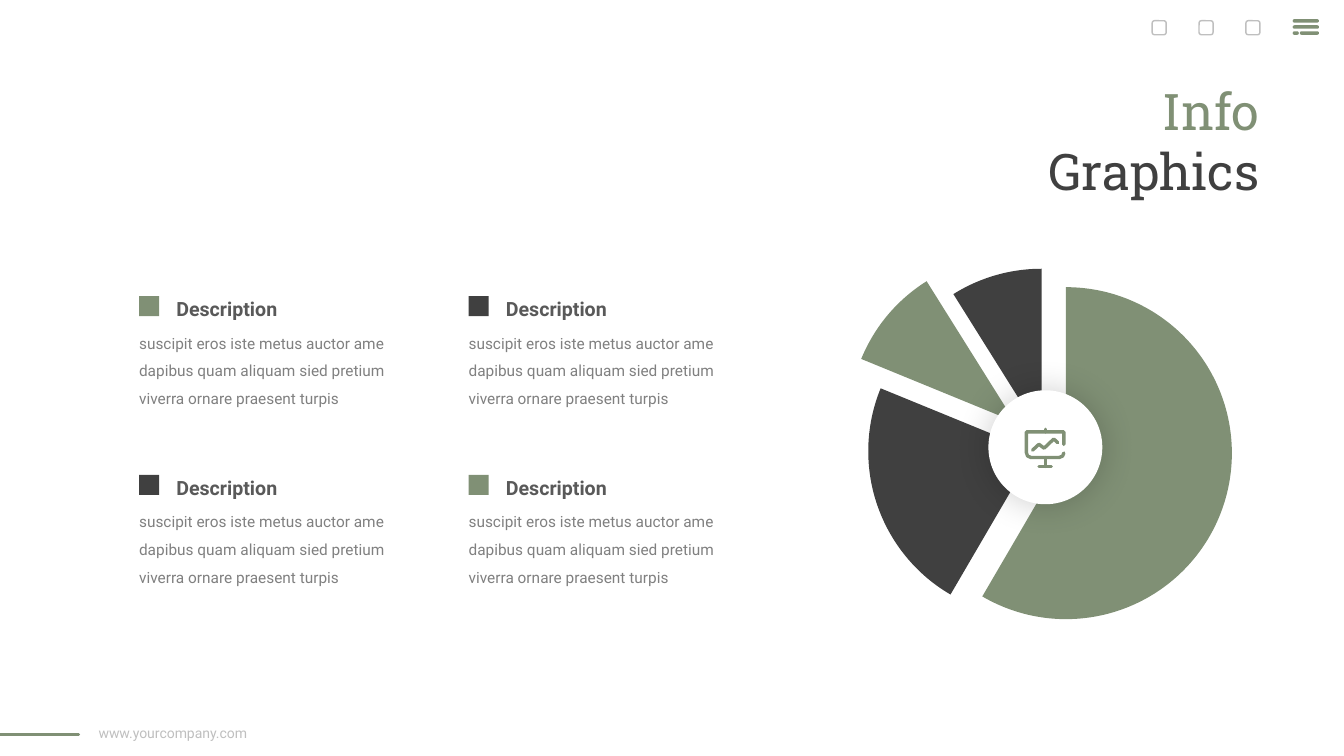
from dataclasses import dataclass

from lxml import etree
from pptx import Presentation
from pptx.chart.data import CategoryChartData
from pptx.dml.color import RGBColor
from pptx.enum.chart import XL_CHART_TYPE
from pptx.enum.shapes import MSO_CONNECTOR, MSO_SHAPE
from pptx.enum.text import MSO_ANCHOR, MSO_AUTO_SIZE, PP_ALIGN
from pptx.oxml import parse_xml
from pptx.oxml.ns import nsdecls, qn
from pptx.util import Pt

RECTANGLE, ROUNDED, OVAL = MSO_SHAPE.RECTANGLE, MSO_SHAPE.ROUNDED_RECTANGLE, MSO_SHAPE.OVAL
STRAIGHT, PIE = MSO_CONNECTOR.STRAIGHT, XL_CHART_TYPE.PIE
LEFT, CENTER, RIGHT = PP_ALIGN.LEFT, PP_ALIGN.CENTER, PP_ALIGN.RIGHT
TOP, GROW = MSO_ANCHOR.TOP, MSO_AUTO_SIZE.SHAPE_TO_FIT_TEXT
GREEN, DARK, WHITE, PALE = "809075", "404040", "FFFFFF", "BFBFBF"
HEADING, BODY = "595959", "808080"
DESCRIPTION = ("suscipit eros iste metus auctor ame dapibus quam aliquam sied pretium "
               "viverra ornare praesent turpis")


@dataclass(frozen=True)
class Card:
    """A description block: its corner and marker colour."""
    left: float
    top: float
    color: str


@dataclass(frozen=True)
class Slice:
    """A pie slice: value, colour and distance from the centre in percent."""
    value: int
    color: str
    explosion: int


@dataclass(frozen=True)
class Bar:
    """One rounded bar of the menu icon."""
    left: float
    top: float
    width: float


CARDS = [Card(99.4, 211.5, GREEN), Card(99.4, 339.2, DARK),
         Card(334.9, 211.5, DARK), Card(334.9, 339.2, GREEN)]
SLICES = [Slice(59, GREEN, 13), Slice(23, DARK, 7), Slice(10, GREEN, 24), Slice(9, DARK, 8)]
MENU_BARS = [Bar(923.8, 13.7, 18.8), Bar(923.8, 18.05, 18.8),
             Bar(923.8, 22.4, 4.4), Bar(928.9, 22.4, 13.7)]
BOARD = [(760.3, 317.5), (760.3, 308.5), (733.5, 308.5), (733.5, 323.3), (734.4, 325.8),
         (736.8, 326.8), (757, 326.8), (759.4, 325.8), (760.3, 323.6)]
TREND = [(737.9, 321.6), (742.5, 317.4), (746.2, 320.2), (753.1, 313.6), (755.9, 316.2)]
STAND = [((747, 306.6), (747, 308.5)), ((747, 326.8), (747, 333.2)),
         ((742.5, 333.2), (751.3, 333.2))]


def rgb(color: str) -> RGBColor:
    """Turn a hex string into a colour."""
    return RGBColor.from_string(color)


def write(paragraph, text: str, *, size: float, color: str, font: str = "Roboto",
          bold: bool = False, align=LEFT, spacing: float = 1.0) -> None:
    """Write one formatted run into a paragraph."""
    paragraph.alignment = align
    paragraph.line_spacing = spacing
    run = paragraph.add_run()
    run.text = text
    run.font.name, run.font.size, run.font.bold = font, Pt(size), bold
    run.font.color.rgb = rgb(color)


def prepare_frame(frame, wrap: bool) -> None:
    """Remove insets and let the frame fit its text."""
    frame.margin_left = frame.margin_top = frame.margin_right = frame.margin_bottom = 0
    frame.vertical_anchor = TOP
    frame.word_wrap = wrap
    frame.auto_size = GROW


def add_text(slide, left: float, top: float, width: float, height: float, text: str,
             wrap: bool = False, **text_format) -> None:
    """Add a text box with one paragraph."""
    frame = slide.shapes.add_textbox(Pt(left), Pt(top), Pt(width), Pt(height)).text_frame
    prepare_frame(frame, wrap)
    write(frame.paragraphs[0], text, **text_format)


def add_filled(slide, kind, left: float, top: float, width: float, height: float, color: str):
    """Add a filled preset shape without outline or shadow."""
    shape = slide.shapes.add_shape(kind, Pt(left), Pt(top), Pt(width), Pt(height))
    shape.shadow.inherit = False
    shape.fill.solid()
    shape.fill.fore_color.rgb = rgb(color)
    shape.line.fill.background()
    return shape


def style_stroke(line, color: str, width: float) -> None:
    """Give a line its colour, width and round ends."""
    line.color.rgb = rgb(color)
    line.width = Pt(width)
    properties = line.fill._xPr
    properties.set("cap", "rnd")
    etree.SubElement(properties, qn("a:round"))


def add_line(slide, start: tuple, end: tuple, width: float) -> None:
    """Add a straight green line."""
    connector = slide.shapes.add_connector(STRAIGHT, *(Pt(value) for value in start + end))
    style_stroke(connector.line, GREEN, width)
    etree.SubElement(connector._element.spPr, qn("a:effectLst"))


def add_outline(slide, points: list, width: float) -> None:
    """Add an open green polyline."""
    corners = [(Pt(x), Pt(y)) for x, y in points]
    builder = slide.shapes.build_freeform(*corners[0])
    builder.add_line_segments(corners[1:], close=False)
    shape = builder.convert_to_shape()
    shape.shadow.inherit = False
    shape.fill.background()
    style_stroke(shape.line, GREEN, width)


def add_pie(slide) -> None:
    """Add the exploded pie chart."""
    data = CategoryChartData()
    data.categories = [str(number) for number in range(1, len(SLICES) + 1)]
    data.add_series("Series 1", [item.value for item in SLICES])
    chart = slide.shapes.add_chart(PIE, Pt(612), Pt(190.8), Pt(270), Pt(257.8), data).chart
    chart.has_legend = chart.has_title = False
    chart.font.name, chart.font.size = "Roboto", Pt(10)
    chart.font.color.rgb = rgb("000000")
    plot = chart.plots[0]
    plot.vary_by_categories = False
    for index, item in enumerate(SLICES):
        point = plot.series[0].points[index]
        point.format.fill.solid()
        point.format.fill.fore_color.rgb = rgb(item.color)
        point.format.line.fill.background()
        properties = point.format._element if hasattr(point.format, "_element") else None
        element = plot.series[0]._element.findall(qn("c:dPt"))[index]
        explosion = etree.Element(qn("c:explosion"), val=str(item.explosion))
        element.find(qn("c:spPr")).addprevious(explosion)
    area = chart._chartSpace.chart.plotArea
    for layout in area.findall(qn("c:layout")):
        area.remove(layout)
    area.insert(0, parse_xml(
        f'<c:layout {nsdecls("c")}><c:manualLayout><c:layoutTarget val="inner"/>'
        '<c:xMode val="edge"/><c:yMode val="edge"/><c:x val="0.06"/><c:y val="0.04"/>'
        '<c:w val="0.88"/><c:h val="0.92"/></c:manualLayout></c:layout>'))


def add_hub(slide) -> None:
    """Add the white disc with its soft shadow and the board icon."""
    disc = add_filled(slide, OVAL, 706.4, 278.8, 81.4, 81.4, WHITE)
    disc._element.spPr.find(qn("a:effectLst")).append(parse_xml(
        f'<a:outerShdw {nsdecls("a")} blurRad="{Pt(25)}" dist="0" dir="0" algn="ctr">'
        '<a:srgbClr val="000000"><a:alpha val="20000"/></a:srgbClr></a:outerShdw>'))
    for points in (BOARD, TREND):
        add_outline(slide, points, 2.4)
    for start, end in STAND:
        add_line(slide, start, end, 2.4)


def add_card(slide, card: Card) -> None:
    """Add a marker, heading and description."""
    add_text(slide, card.left, card.top + 20.3, 191.5, 57.6, DESCRIPTION, wrap=True,
             size=11, color=BODY, spacing=1.5)
    add_text(slide, card.left + 26.6, card.top - 7.8, 72.7, 22.3, "Description",
             size=14, color=HEADING, bold=True, spacing=1.5)
    add_filled(slide, RECTANGLE, card.left, card.top, 14.4, 14.4, card.color)


def add_header(slide) -> None:
    """Add the title, the three plain badges and the menu icon."""
    title = slide.shapes.title
    title.left, title.top, title.width, title.height = Pt(743), Pt(56.9), Pt(157), Pt(87.1)
    frame = title.text_frame
    prepare_frame(frame, False)
    write(frame.paragraphs[0], "Info", size=36, color=GREEN, font="Roboto Slab", align=RIGHT)
    write(frame.add_paragraph(), "Graphics", size=36, color=DARK, font="Roboto Slab", align=RIGHT)
    for index in range(3):
        badge = add_filled(slide, ROUNDED, 823.4 + 33.5 * index, 14.8, 10, 10, WHITE)
        badge.line.color.rgb = rgb(PALE)
        badge.line.width = Pt(1)
    for bar in MENU_BARS:
        add_filled(slide, ROUNDED, bar.left, bar.top, bar.width, 2.5, GREEN).adjustments[0] = 0.5


def main() -> None:
    """Build and save the slide."""
    presentation = Presentation()
    presentation.slide_width, presentation.slide_height = Pt(960.5), Pt(540)
    slide = presentation.slides.add_slide(presentation.slide_layouts[5])
    add_pie(slide)
    for card in CARDS:
        add_card(slide, card)
    add_hub(slide)
    add_header(slide)
    add_text(slide, 67.7, 517.7, 111.6, 12.2, "www.yourcompany.com",
             size=10, color=PALE, align=CENTER)
    add_line(slide, (0, 524.4), (56.2, 524.4), 2)
    presentation.save("out.pptx")


if __name__ == "__main__":
    main()
